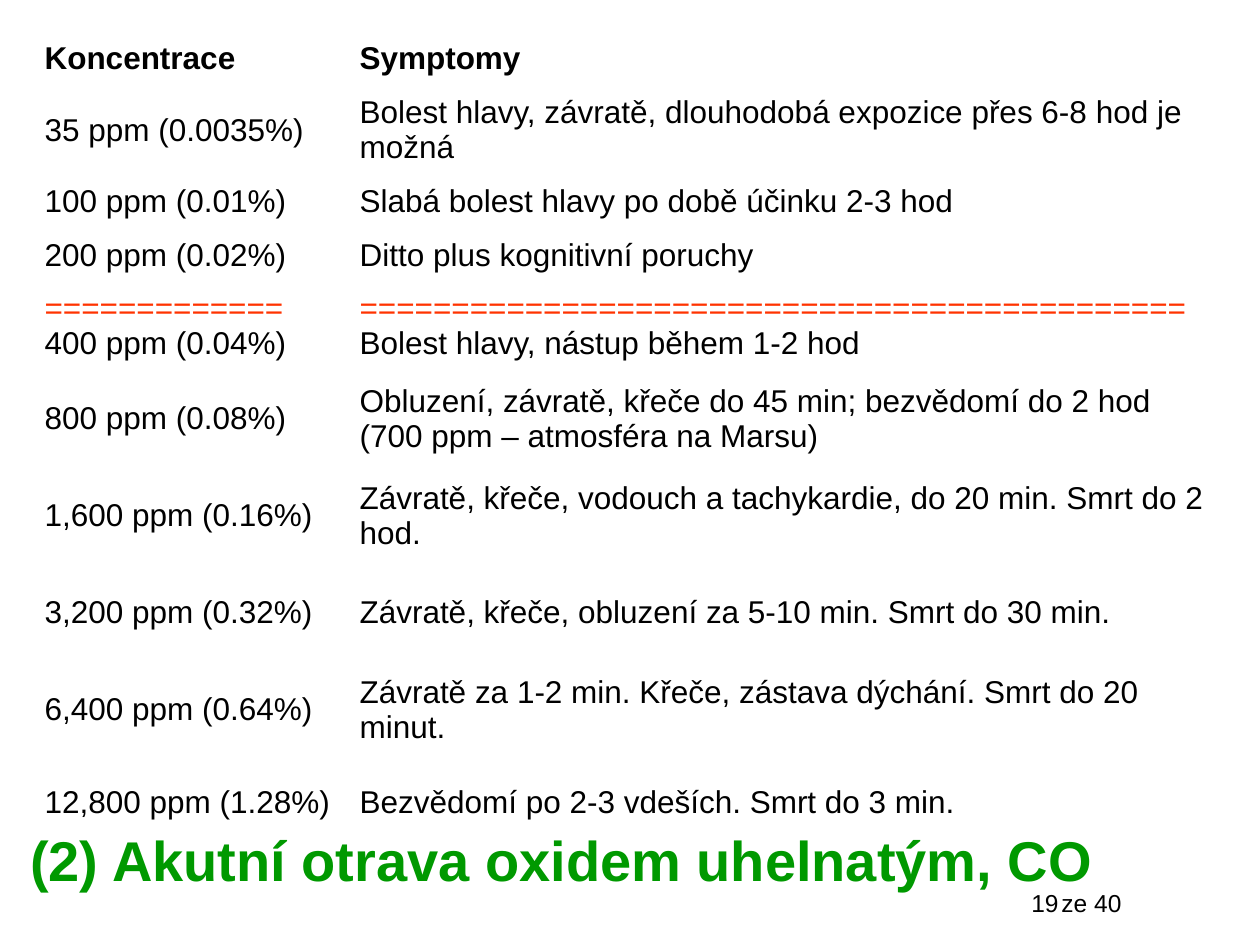
from pptx import Presentation, util as u
from pptx.dml.color import RGBColor
from pptx.enum import text

PX = u.Inches(1) / 126
COLORS = {"body": "000000", "limit": "FF3300", "title": "009900"}
DIVIDER = "="

COLUMNS = [315, 872]
ROW_HEIGHTS = [54] * 4 + [88] + [97] * 4 + [88]
# Each cell is a list of paragraphs
EXPOSURES = [
    (["Koncentrace"], ["Symptomy"]),
    (["35 ppm (0.0035%)"],
     ["Bolest hlavy, závratě, dlouhodobá expozice přes 6-8 hod je možná"]),
    (["100 ppm (0.01%)"], ["Slabá bolest hlavy po době účinku 2-3 hod"]),
    (["200 ppm (0.02%)"], ["Ditto plus kognitivní poruchy"]),
    ([DIVIDER * 13, "400 ppm (0.04%)"],
     [DIVIDER * 45, "Bolest hlavy, nástup během 1-2 hod"]),
    (["800 ppm (0.08%)"],
     ["Obluzení, závratě, křeče do 45 min; bezvědomí do 2 hod",
      "(700 ppm – atmosféra na Marsu)"]),
    (["1,600 ppm (0.16%)"],
     ["Závratě, křeče, vodouch a tachykardie, do 20 min. Smrt do 2 hod."]),
    (["3,200 ppm (0.32%)"],
     ["Závratě, křeče, obluzení za 5-10 min. Smrt do 30 min."]),
    (["6,400 ppm (0.64%)"],
     ["Závratě za 1-2 min. Křeče, zástava dýchání. Smrt do 20 minut."]),
    (["12,800 ppm (1.28%)"], ["Bezvědomí po 2-3 vdeších. Smrt do 3 min."]),
]


def px(length):
    return u.Emu(round(length * PX))


class SlideBuilder:
    font_name = "Arial"

    def __init__(self, slide):
        self.slide = slide

    def style(self, paragraph, words, size, color="body", bold=False):
        run = paragraph.add_run()
        run.text = words
        values = {"name": self.font_name, "size": u.Pt(size), "bold": bold}
        for key, value in values.items():
            setattr(run.font, key, value)
        run.font.color.rgb = RGBColor.from_string(COLORS[color])

    def label(self, box, words, size, align, **look):
        frame = self.slide.shapes.add_textbox(*map(px, box)).text_frame
        frame.word_wrap = True
        frame.paragraphs[0].alignment = align
        self.style(frame.paragraphs[0], words, size, **look)

    def table(self, left, top, widths, heights, rows, size):
        grid = self.slide.shapes.add_table(
            len(rows), len(widths), px(left), px(top),
            px(sum(widths)), px(sum(heights))).table
        for flag in ("first_row", "horz_banding"):
            setattr(grid, flag, False)
        for column, width in zip(grid.columns, widths):
            column.width = px(width)
        for row, height in zip(grid.rows, heights):
            row.height = px(height)
        for r, row in enumerate(rows):
            for c, lines in enumerate(row):
                self.cell(grid.cell(r, c), lines, size, bold=r == 0)

    def cell(self, cell, lines, size, bold):
        cell.fill.background()
        cell.vertical_anchor = text.MSO_ANCHOR.MIDDLE
        frame = cell.text_frame
        for i, line in enumerate(lines):
            paragraph = frame.add_paragraph() if i else frame.paragraphs[0]
            color = "limit" if line.startswith(DIVIDER) else "body"
            self.style(paragraph, line, size, color, bold)


def main():
    deck = Presentation()
    deck.slide_width, deck.slide_height = px(1260), px(945)
    page = SlideBuilder(deck.slides.add_slide(deck.slide_layouts[6]))
    align = text.PP_ALIGN

    # Page number and page count
    page.label((1018, 882, 147, 63), "ze 40", 14, align.CENTER)
    page.label((809, 882, 262, 63), "19", 14, align.RIGHT)

    # Concentrations and their symptoms
    page.table(32, 32, COLUMNS, ROW_HEIGHTS, EXPOSURES, 18)

    # Title under the table
    page.label((0, 819, 1124, 81), "(2) Akutní otrava oxidem uhelnatým, CO",
               32, align.CENTER, color="title", bold=True)

    deck.save("out.pptx")


if __name__ == "__main__":
    main()
